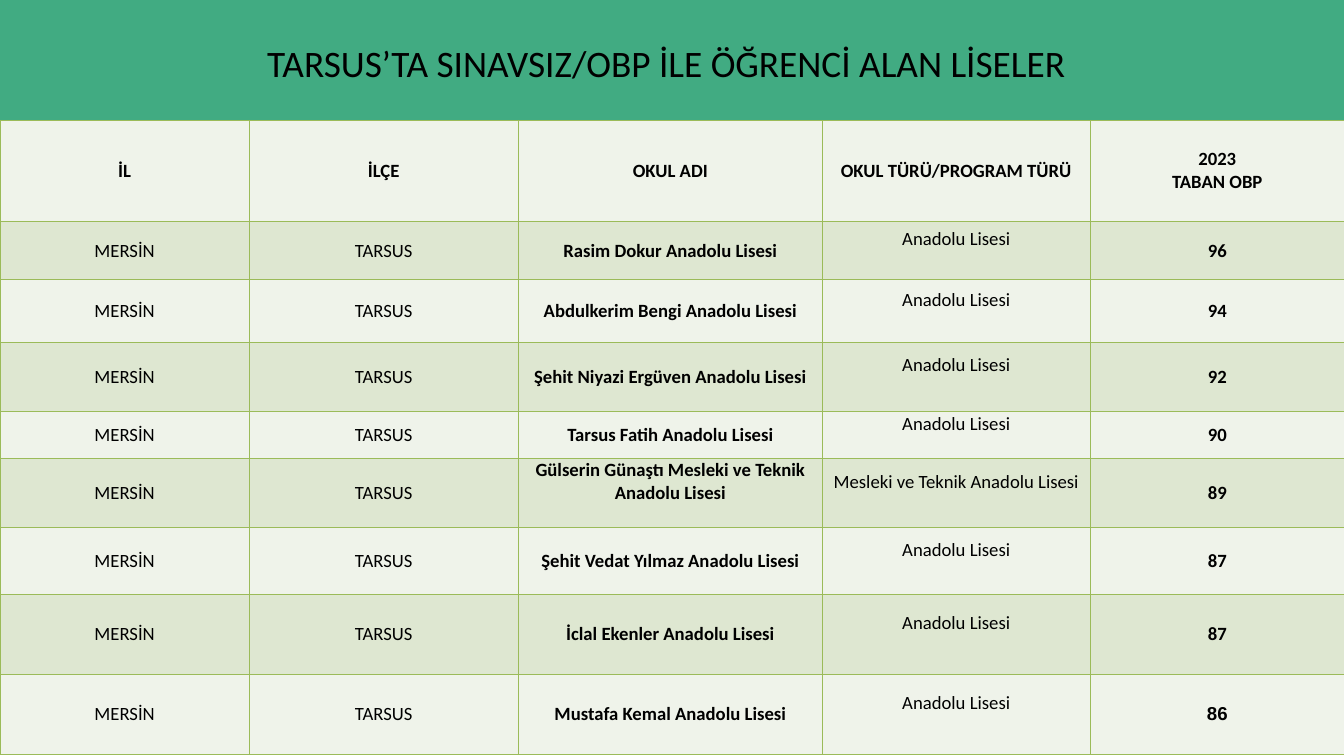
from typing import NamedTuple

from lxml import etree
from pptx import Presentation
from pptx.dml.color import RGBColor
from pptx.enum.shapes import MSO_SHAPE
from pptx.enum.text import MSO_ANCHOR, PP_ALIGN
from pptx.oxml.ns import qn
from pptx.util import Inches, Pt

RECTANGLE = MSO_SHAPE.RECTANGLE
MIDDLE = MSO_ANCHOR.MIDDLE
CENTER = PP_ALIGN.CENTER

GREEN, BORDER, BLACK = "41AB82", "9BBB59", "000000"
BANDS = ("EFF3EA", "DEE7D1")
COL_WIDTHS = (3.71, 4, 4.53, 3.98, 3.79)
ROW_HEIGHTS = (1.5, 0.87, 0.93, 1.03, 0.7, 1.02, 0.99, 1.19, 1.19)
LINE = 0.34  # height of one line of table text, in inches
HEADERS = ("İL", "İLÇE", "OKUL ADI", "OKUL TÜRÜ/PROGRAM TÜRÜ", "2023\nTABAN OBP")


class School(NamedTuple):
    name: str
    score: int
    kind: str = "Anadolu Lisesi"
    name_raise: float = 0
    score_font: str = "Calibri"


SCHOOLS = (
    School("Rasim Dokur Anadolu Lisesi", 96),
    School("Abdulkerim Bengi Anadolu Lisesi", 94),
    School("Şehit Niyazi Ergüven Anadolu Lisesi", 92),
    School("Tarsus Fatih Anadolu Lisesi", 90),
    School("Gülserin Günaştı Mesleki ve Teknik Anadolu Lisesi", 89,
           kind="Mesleki ve Teknik Anadolu Lisesi", name_raise=LINE),
    School("Şehit Vedat Yılmaz Anadolu Lisesi", 87),
    School("İclal Ekenler Anadolu Lisesi", 87),
    School("Mustafa Kemal Anadolu Lisesi", 86, score_font="Arial"),
)


def rgb(value: str) -> RGBColor:
    return RGBColor.from_string(value)


def format_text(tf, size: float, bold: bool = False, font: str = "Calibri") -> None:
    for p in tf.paragraphs:
        p.alignment = CENTER
        for r in p.runs:
            r.font.name = font
            r.font.size = Pt(size)
            r.font.bold = bold
            r.font.color.rgb = rgb(BLACK)


def add_borders(cell) -> None:
    tc_pr = cell._tc.get_or_add_tcPr()
    for side in ("a:lnL", "a:lnR", "a:lnT", "a:lnB"):
        ln = etree.SubElement(tc_pr, qn(side), w=str(Pt(1)))
        fill = etree.SubElement(ln, qn("a:solidFill"))
        etree.SubElement(fill, qn("a:srgbClr"), val=BORDER)


def fill_cell(cell, text: str, band: str, bold: bool = False,
              bottom: float = 0, font: str = "Calibri") -> None:
    """Write a bordered cell; a bottom margin raises its centred text."""
    add_borders(cell)
    cell.fill.solid()
    cell.fill.fore_color.rgb = rgb(band)
    cell.vertical_anchor = MIDDLE
    cell.margin_left = cell.margin_right = cell.margin_top = Inches(0.01)
    cell.margin_bottom = Inches(bottom)
    cell.text_frame.text = text
    format_text(cell.text_frame, 20, bold, font)


def add_school_table(s) -> None:
    frame = s.shapes.add_table(len(ROW_HEIGHTS), len(COL_WIDTHS), 0, Inches(1.79),
                               Inches(sum(COL_WIDTHS)), Inches(sum(ROW_HEIGHTS)))
    table = frame.table
    table.first_row = table.horz_banding = False
    for column, width in zip(table.columns, COL_WIDTHS):
        column.width = Inches(width)
    for row, height in zip(table.rows, ROW_HEIGHTS):
        row.height = Inches(height)

    for col, header in enumerate(HEADERS):
        fill_cell(table.cell(0, col), header, BANDS[0], bold=True)
    for row, school in enumerate(SCHOOLS, start=1):
        band = BANDS[row % 2]
        fill_cell(table.cell(row, 0), "MERSİN", band)
        fill_cell(table.cell(row, 1), "TARSUS", band)
        fill_cell(table.cell(row, 2), school.name, band, bold=True,
                  bottom=school.name_raise)
        fill_cell(table.cell(row, 3), school.kind, band, bottom=LINE)
        fill_cell(table.cell(row, 4), str(school.score), band, bold=True,
                  font=school.score_font)


def add_title(s, text: str) -> None:
    """Fill the title placeholder and put the green band behind it."""
    title = s.shapes.title
    title.left, title.top = Inches(0.83), Inches(0.54)
    title.width, title.height = Inches(18.17), Inches(0.77)
    tf = title.text_frame
    tf.text = text
    tf.word_wrap = True
    tf.vertical_anchor = MIDDLE
    format_text(tf, 40)

    band = s.shapes.add_shape(RECTANGLE, 0, 0, Inches(20), Inches(1.92))
    band.shadow.inherit = False
    band.fill.solid()
    band.fill.fore_color.rgb = rgb(GREEN)
    band.line.fill.background()
    title.element.addprevious(band.element)


def main() -> None:
    prs = Presentation()
    prs.slide_width, prs.slide_height = Inches(20), Inches(11.25)
    s = prs.slides.add_slide(prs.slide_layouts[5])
    add_title(s, "TARSUS’TA SINAVSIZ/OBP İLE ÖĞRENCİ ALAN LİSELER")
    add_school_table(s)
    prs.save("out.pptx")


if __name__ == "__main__":
    main()
